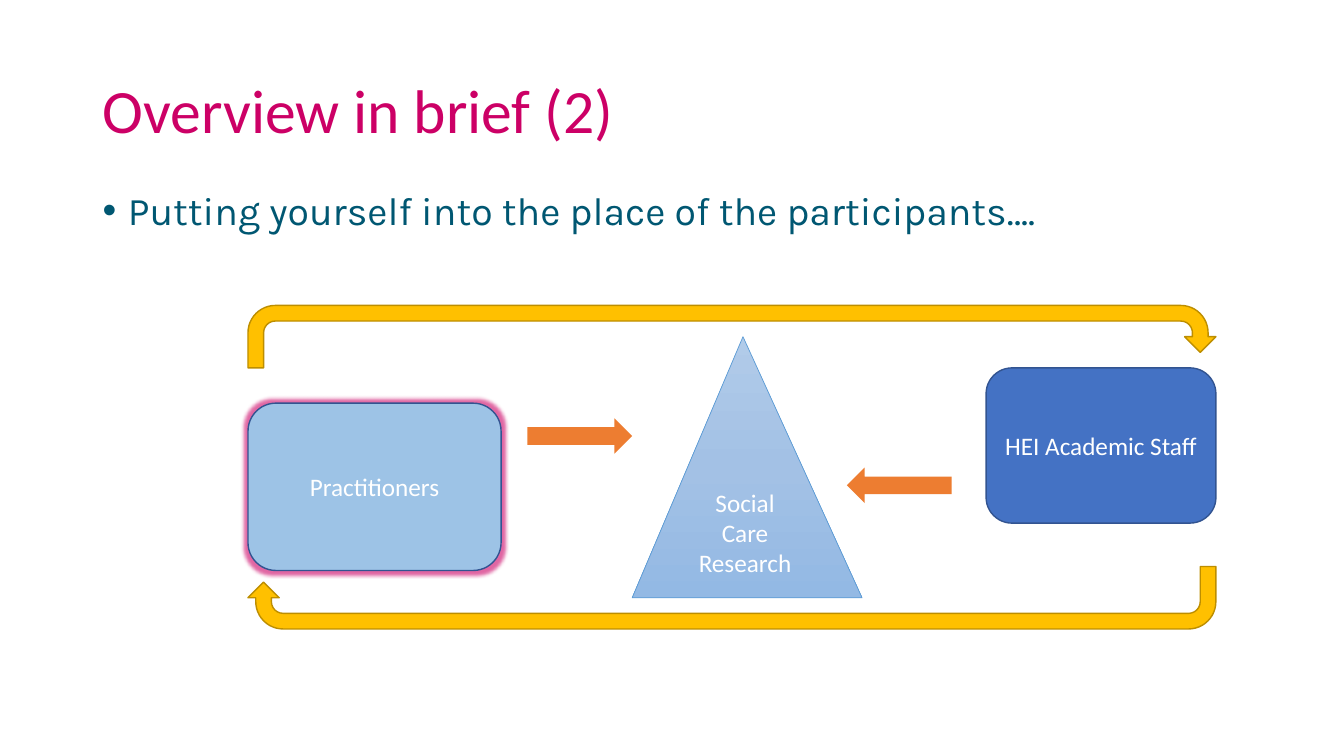
from copy import deepcopy

from lxml.etree import SubElement
from pptx import Presentation
from pptx.dml.color import RGBColor
from pptx.enum.shapes import MSO_SHAPE
from pptx.enum.text import MSO_ANCHOR, PP_ALIGN
from pptx.oxml.ns import qn
from pptx.util import Pt

PX = 9144  # 100 px to the inch


def px(*lengths):
    return [n * PX for n in lengths]


def rgb(value):
    return RGBColor.from_string(value)


def add_run(p, text, size, font, color):
    r = p.add_run()
    r.text = text
    r.font.size = Pt(size)
    r.font.name = font
    r.font.color.rgb = rgb(color)


def add_text(s, box, text, size, font, color, anchor):
    tf = s.shapes.add_textbox(*px(*box)).text_frame
    tf.word_wrap = True
    tf.vertical_anchor = anchor
    p = tf.paragraphs[0]
    p.line_spacing = 0.9
    add_run(p, text, size, font, color)
    return p


def add_bullet(p, indent):
    pPr = p._p.get_or_add_pPr()
    pPr.set("marL", str(indent * PX))
    pPr.set("indent", str(-indent * PX))
    SubElement(pPr, qn("a:buFont"), typeface="Arial")
    SubElement(pPr, qn("a:buChar"), char="•")


def add_shape(s, kind, box, fill, line=None, width=1, lines=(), flip=""):
    sp = s.shapes.add_shape(kind, *px(*box))
    sp.shadow.inherit = False
    sp.fill.solid()
    sp.fill.fore_color.rgb = rgb(fill)
    if line:
        sp.line.color.rgb = rgb(line)
        sp.line.width = Pt(width)
    else:
        sp.line.fill.background()
    for axis in flip:
        sp._element.spPr.xfrm.set("flip" + axis, "1")
    tf = sp.text_frame
    tf.vertical_anchor = MSO_ANCHOR.MIDDLE
    for i, text in enumerate(lines):
        p = tf.add_paragraph() if i else tf.paragraphs[0]
        p.alignment = PP_ALIGN.CENTER
        add_run(p, text, 18, "Calibri", "FFFFFF")
    return sp


def add_glow(sp, color, radius, alpha):
    effects = sp._element.spPr.find(qn("a:effectLst"))
    glow = SubElement(effects, qn("a:glow"), rad=str(radius * PX))
    clr = SubElement(glow, qn("a:srgbClr"), val=color)
    SubElement(clr, qn("a:alpha"), val=str(alpha * 1000))


def set_gradient(sp, colors):
    sp.fill.gradient()
    sp.fill.gradient_angle = 270
    gs_list = sp._element.spPr.find(".//" + qn("a:gsLst"))
    while len(gs_list) < len(colors):
        gs_list.append(deepcopy(gs_list[0]))
    for i, (stop, color) in enumerate(zip(sp.fill.gradient_stops, colors)):
        stop.position = i / (len(colors) - 1)
        stop.color.rgb = rgb(color)


def main():
    prs = Presentation()
    prs.slide_width, prs.slide_height = px(1333, 750)
    s = prs.slides.add_slide(prs.slide_layouts[6])

    # Title
    add_text(s, (92, 40, 1150, 145), "Overview in brief (2)",
             44, "Calibri", "CC0066", MSO_ANCHOR.MIDDLE)

    # Participants
    practitioners = add_shape(s, MSO_SHAPE.ROUNDED_RECTANGLE, (246, 400, 251, 166),
                              "9DC3E6", "325491", lines=["Practitioners"])
    add_glow(practitioners, "CC0066", 7, 60)
    add_shape(s, MSO_SHAPE.ROUNDED_RECTANGLE, (978, 365, 228, 154),
              "4472C4", "325491", lines=["HEI Academic Staff"])

    # Research triangle
    research = add_shape(s, MSO_SHAPE.ISOSCELES_TRIANGLE, (627, 334, 228, 259),
                         "A3C1E5", "5B9BD5", 0.5, ["Social", "Care", "Research"])
    research.adjustments[0] = 0.482
    set_gradient(research, ["B1CBE9", "A3C1E5", "93B9E4"])

    # Arrows towards the research
    for x, y, flip in [(523, 415, ""), (840, 464, "H")]:
        add_shape(s, MSO_SHAPE.RIGHT_ARROW, (x, y, 104, 35), "ED7D31", flip=flip)

    # Arrows between the participants
    for y, flip in [(303, ""), (562, "HV")]:
        add_shape(s, MSO_SHAPE.U_TURN_ARROW, (246, y, 960, 62),
                  "FFC000", "BD8E00", flip=flip)

    # Body
    p = add_text(s, (92, 185, 1150, 393),
                 "Putting yourself into the place of the participants….",
                 28, "Karla", "005772", MSO_ANCHOR.TOP)
    p.space_after = Pt(12)
    add_bullet(p, 25)

    prs.save("out.pptx")


if __name__ == "__main__":
    main()
